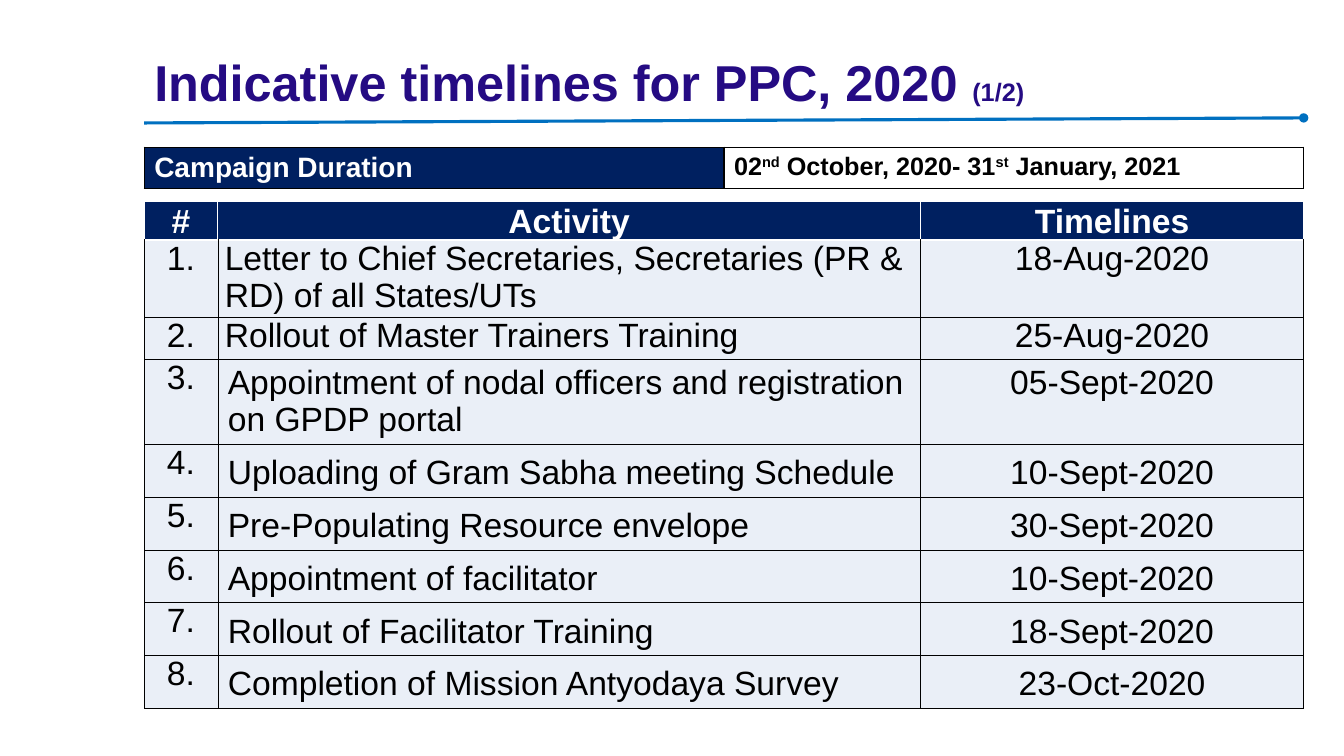
from dataclasses import dataclass

from lxml.etree import SubElement
from pptx import Presentation
from pptx.dml.color import RGBColor as RGB
from pptx.enum.shapes import MSO_CONNECTOR as CONNECTOR
from pptx.enum.text import MSO_ANCHOR as ANCHOR, PP_ALIGN as ALIGN
from pptx.oxml import parse_xml
from pptx.oxml.ns import nsdecls, qn
from pptx.util import Inches, Pt


@dataclass(frozen=True)
class Theme:
    font: str = "Arial"
    title: str = "250B83"
    rule: str = "0070C0"
    navy: str = "002060"
    pale: str = "EAEFF7"
    white: str = "FFFFFF"
    black: str = "000000"
    title_size: int = 36
    body_size: int = 24
    label_size: int = 20
    small_size: int = 18


THEME = Theme()
LEFT, WIDTH = 1.43, 11.5

DURATION = [("02", False), ("nd", True), (" October, 2020- 31", False),
            ("st", True), (" January, 2021", False)]
HEADINGS = ["#", "Activity", "Timelines"]
TIMELINES = [
    ("Letter to Chief Secretaries, Secretaries (PR & RD) of all States/UTs", "18-Aug-2020"),
    ("Rollout of Master Trainers Training", "25-Aug-2020"),
    ("Appointment of nodal officers and registration on GPDP portal", "05-Sept-2020"),
    ("Uploading of Gram Sabha meeting Schedule", "10-Sept-2020"),
    ("Pre-Populating Resource envelope", "30-Sept-2020"),
    ("Appointment of facilitator", "10-Sept-2020"),
    ("Rollout of Facilitator Training", "18-Sept-2020"),
    ("Completion of Mission Antyodaya Survey", "23-Oct-2020"),
]
COLUMN_WIDTHS = [0.73, 6.97, 3.8]
ROW_HEIGHTS = [0.37, 0.76, 0.42, 0.84] + [0.52] * 5
TIGHT_ROWS = 2    # leading activities with narrow cell margins
SINGLE_ROWS = 3   # leading activities with single line spacing


def set_font(font, size, color, bold=False):
    font.name, font.size, font.bold = THEME.font, Pt(size), bold
    font.color.rgb = RGB.from_string(color)


def set_borders(cell, color, width, top=None):
    """Draw all four borders; top may give the upper one its own (color, width)."""
    tcPr = cell._tc.get_or_add_tcPr()
    for i, side in enumerate("LRTB"):
        c, w = top if top and side == "T" else (color, width)
        tcPr.insert(i, parse_xml(
            f'<a:ln{side} {nsdecls("a")} w="{Pt(w)}"><a:solidFill>'
            f'<a:srgbClr val="{c}"/></a:solidFill></a:ln{side}>'))


def set_margins(cell, left, top, right, bottom):
    cell.margin_left, cell.margin_top = Inches(left), Inches(top)
    cell.margin_right, cell.margin_bottom = Inches(right), Inches(bottom)


def fill_cell(cell, color):
    cell.fill.solid()
    cell.fill.fore_color.rgb = RGB.from_string(color)


def add_plain_table(s, left, top, widths, heights):
    table = s.shapes.add_table(len(heights), len(widths), Inches(left), Inches(top),
                               Inches(sum(widths)), Inches(sum(heights))).table
    table.horz_banding = False
    for column, width in zip(table.columns, widths):
        column.width = Inches(width)
    for row, height in zip(table.rows, heights):
        row.height = Inches(height)
    return table


def add_title(s, left, top, width, height):
    title = s.shapes.title
    title.left, title.top = Inches(left), Inches(top)
    title.width, title.height = Inches(width), Inches(height)
    tf = title.text_frame
    tf.word_wrap, tf.vertical_anchor = True, ANCHOR.MIDDLE
    p = tf.paragraphs[0]
    p.alignment, p.line_spacing = ALIGN.LEFT, 0.9
    for text, size in [("Indicative timelines for PPC, 2020 ", THEME.title_size),
                       ("(1/2)", THEME.small_size)]:
        r = p.add_run()
        r.text = text
        set_font(r.font, size, THEME.title, True)


def add_title_rule(s, left, top, width, rise):
    """Draw the slightly rising line under the title, ending in a dot."""
    rule = s.shapes.add_connector(CONNECTOR.STRAIGHT, Inches(left), Inches(top),
                                  Inches(left + width), Inches(top - rise))
    rule.line.color.rgb = RGB.from_string(THEME.rule)
    rule.line.width = Pt(2.25)
    SubElement(rule.line._get_or_add_ln(), qn("a:tailEnd"), type="oval")
    SubElement(rule._element.spPr, qn("a:effectLst"))


def add_duration(s, left, top, width, height):
    table = add_plain_table(s, left, top, [width / 2] * 2, [height])
    label, dates = table.cell(0, 0), table.cell(0, 1)
    for cell, color in ((label, THEME.navy), (dates, THEME.white)):
        fill_cell(cell, color)
        set_borders(cell, THEME.black, 1)
    label.text = "Campaign Duration"
    set_font(label.text_frame.paragraphs[0].font, THEME.label_size, THEME.white, True)
    p = dates.text_frame.paragraphs[0]
    for text, raised in DURATION:
        r = p.add_run()
        r.text = text
        if raised:
            r._r.get_or_add_rPr().set("baseline", "30000")
    set_font(p.font, THEME.small_size, THEME.black, True)


def format_heading(cell, text):
    cell.text = text
    cell.vertical_anchor = ANCHOR.MIDDLE
    set_margins(cell, 0.01, 0.01, 0.01, 0)
    fill_cell(cell, THEME.navy)
    set_borders(cell, THEME.white, 1)
    p = cell.text_frame.paragraphs[0]
    p.alignment = ALIGN.CENTER
    set_font(p.font, THEME.body_size, THEME.white, True)


def format_entry(cell, text, row, column):
    cell.text = text
    fill_cell(cell, THEME.pale)
    set_borders(cell, THEME.black, 0.25, top=(THEME.white, 1) if row == 1 else None)
    p = cell.text_frame.paragraphs[0]
    p.alignment = ALIGN.LEFT if column == 1 else ALIGN.CENTER
    if column == 0:
        set_margins(cell, 0, 0, 0, 0)
    elif row <= TIGHT_ROWS:
        set_margins(cell, 0.07, 0, 0.07, 0)
    if column > 0 and row > SINGLE_ROWS:
        p.line_spacing = 1.14
    set_font(p.font, THEME.body_size, THEME.black)


def add_timelines(s, left, top):
    table = add_plain_table(s, left, top, COLUMN_WIDTHS, ROW_HEIGHTS)
    for column, text in enumerate(HEADINGS):
        format_heading(table.cell(0, column), text)
    for row, entry in enumerate(TIMELINES, 1):
        for column, text in enumerate((f"{row}.", *entry)):
            format_entry(table.cell(row, column), text, row, column)


def main():
    prs = Presentation()
    prs.slide_width, prs.slide_height = Inches(13.33), Inches(7.5)
    s = prs.slides.add_slide(prs.slide_layouts[5])
    add_title_rule(s, LEFT, 1.22, WIDTH, 0.05)
    add_title(s, LEFT, 0.12, WIDTH, 1.45)
    add_timelines(s, LEFT, 2)
    add_duration(s, LEFT, 1.46, WIDTH, 0.41)
    prs.save("out.pptx")


if __name__ == "__main__":
    main()
